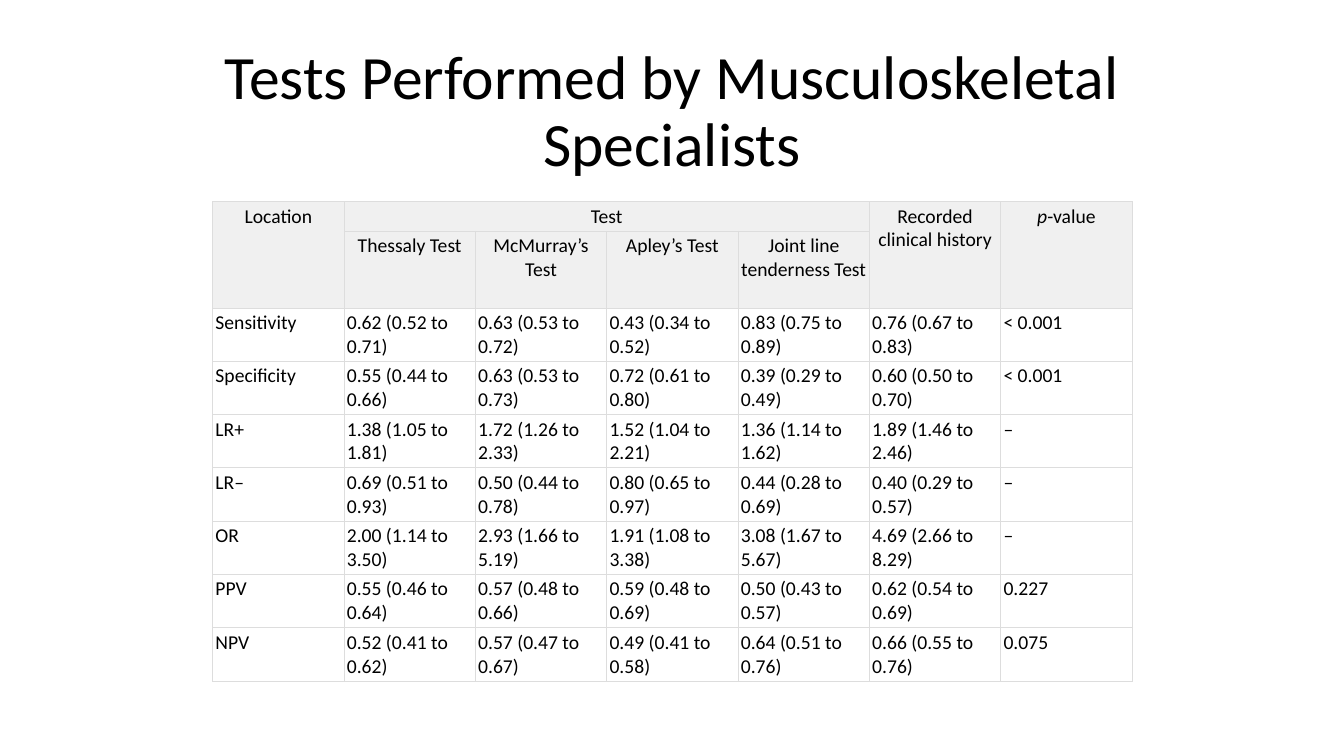
from dataclasses import dataclass

from lxml.etree import SubElement
from pptx import Presentation
from pptx.dml.color import RGBColor
from pptx.enum.text import MSO_ANCHOR as Anchor, PP_ALIGN as Align
from pptx.oxml.ns import qn
from pptx.slide import Slide
from pptx.table import Table, _Cell as Cell
from pptx.text.text import _Paragraph as Paragraph
from pptx.util import Cm, Pt

COLORS = {"text": "000000", "header": "F0F0F0", "border": "DDDDDD"}
FONT = "Calibri"
COLUMN_WIDTH = Cm(3.31)
ROW_HEIGHTS = [Cm(0.74), Cm(1.94)] + [Cm(1.34)] * 7
CELL_MARGIN = Cm(0.07)


@dataclass(frozen=True)
class Heading:
    """A header cell with its place in the grid and the cells it spans."""
    row: int
    column: int
    text: str
    rows: int = 1
    columns: int = 1
    italic_prefix: str = ""


@dataclass(frozen=True)
class Measure:
    """A body row: one estimate per test, the clinical history and the p-value."""
    label: str
    estimates: tuple[str, ...]
    p_value: str


HEADINGS = [
    Heading(0, 0, "Location", rows=2),
    Heading(0, 1, "Test", columns=4),
    Heading(0, 5, "Recorded clinical history", rows=2),
    Heading(0, 6, "-value", rows=2, italic_prefix="p"),
    Heading(1, 1, "Thessaly Test"),
    Heading(1, 2, "McMurray’s Test"),
    Heading(1, 3, "Apley’s Test"),
    Heading(1, 4, "Joint line tenderness Test"),
]

MEASURES = [
    Measure("Sensitivity", ("0.62 (0.52 to 0.71)", "0.63 (0.53 to 0.72)", "0.43 (0.34 to 0.52)",
                            "0.83 (0.75 to 0.89)", "0.76 (0.67 to 0.83)"), "< 0.001"),
    Measure("Specificity", ("0.55 (0.44 to 0.66)", "0.63 (0.53 to 0.73)", "0.72 (0.61 to 0.80)",
                            "0.39 (0.29 to 0.49)", "0.60 (0.50 to 0.70)"), "< 0.001"),
    Measure("LR+", ("1.38 (1.05 to 1.81)", "1.72 (1.26 to 2.33)", "1.52 (1.04 to 2.21)",
                    "1.36 (1.14 to 1.62)", "1.89 (1.46 to 2.46)"), "–"),
    Measure("LR–", ("0.69 (0.51 to 0.93)", "0.50 (0.44 to 0.78)", "0.80 (0.65 to 0.97)",
                    "0.44 (0.28 to 0.69)", "0.40 (0.29 to 0.57)"), "–"),
    Measure("OR", ("2.00 (1.14 to 3.50)", "2.93 (1.66 to 5.19)", "1.91 (1.08 to 3.38)",
                   "3.08 (1.67 to 5.67)", "4.69 (2.66 to 8.29)"), "–"),
    Measure("PPV", ("0.55 (0.46 to 0.64)", "0.57 (0.48 to 0.66)", "0.59 (0.48 to 0.69)",
                    "0.50 (0.43 to 0.57)", "0.62 (0.54 to 0.69)"), "0.227"),
    Measure("NPV", ("0.52 (0.41 to 0.62)", "0.57 (0.47 to 0.67)", "0.49 (0.41 to 0.58)",
                    "0.64 (0.51 to 0.76)", "0.66 (0.55 to 0.76)"), "0.075"),
]


def add_run(paragraph: Paragraph, text: str, size: int = 14, italic: bool = False) -> None:
    """Append one formatted run."""
    run = paragraph.add_run()
    run.text = text
    run.font.name = FONT
    run.font.size = Pt(size)
    run.font.bold = False
    run.font.italic = italic
    run.font.color.rgb = RGBColor.from_string(COLORS["text"])


def add_borders(cell: Cell) -> None:
    """Draw the four thin cell borders."""
    properties = cell._tc.get_or_add_tcPr()
    for side in ("lnL", "lnR", "lnT", "lnB"):
        border = SubElement(properties, qn(f"a:{side}"), w=str(Pt(0.75)))
        fill = SubElement(border, qn("a:solidFill"))
        SubElement(fill, qn("a:srgbClr"), val=COLORS["border"])


def format_cell(cell: Cell, is_header: bool) -> None:
    """Set borders, margins and fill."""
    add_borders(cell)
    cell.margin_left = cell.margin_right = CELL_MARGIN
    cell.margin_top = cell.margin_bottom = CELL_MARGIN
    if is_header:
        cell.fill.solid()
        cell.fill.fore_color.rgb = RGBColor.from_string(COLORS["header"])
    else:
        cell.fill.background()


def write_heading(table: Table, heading: Heading) -> None:
    """Merge the span of a heading and write its text."""
    cell = table.cell(heading.row, heading.column)
    if heading.rows * heading.columns > 1:
        cell.merge(table.cell(heading.row + heading.rows - 1,
                              heading.column + heading.columns - 1))
    paragraph = cell.text_frame.paragraphs[0]
    paragraph.alignment = Align.CENTER
    if heading.italic_prefix:
        add_run(paragraph, heading.italic_prefix, italic=True)
    add_run(paragraph, heading.text)


def write_measure(table: Table, row: int, measure: Measure) -> None:
    """Fill one body row."""
    for column, text in enumerate((measure.label, *measure.estimates, measure.p_value)):
        paragraph = table.cell(row, column).text_frame.paragraphs[0]
        paragraph.alignment = Align.LEFT
        add_run(paragraph, text)


def add_results(slide: Slide) -> None:
    """Add the table of test results."""
    results = slide.shapes.add_table(len(ROW_HEIGHTS), 7, Cm(5.36), Cm(5.08),
                                     COLUMN_WIDTH * 7, sum(ROW_HEIGHTS)).table
    results.horz_banding = False
    results.first_row = False
    for column in results.columns:
        column.width = COLUMN_WIDTH
    for index, (row, height) in enumerate(zip(results.rows, ROW_HEIGHTS)):
        row.height = height
        for cell in row.cells:
            format_cell(cell, is_header=index < 2)
    for heading in HEADINGS:
        write_heading(results, heading)
    for row_index, measure in enumerate(MEASURES, start=2):
        write_measure(results, row_index, measure)


def write_title(slide: Slide, text: str) -> None:
    """Place and format the title placeholder."""
    title = slide.shapes.title
    title.left, title.top, title.width, title.height = Cm(2.33), Cm(1.01), Cm(29.21), Cm(3.68)
    title.text_frame.word_wrap = True
    title.text_frame.vertical_anchor = Anchor.MIDDLE
    paragraph = title.text_frame.paragraphs[0]
    paragraph.alignment = Align.CENTER
    paragraph.line_spacing = 0.9
    add_run(paragraph, text, size=44)


def main() -> None:
    """Build and save the slide."""
    presentation = Presentation()
    presentation.slide_width, presentation.slide_height = Cm(33.87), Cm(19.05)
    slide = presentation.slides.add_slide(presentation.slide_layouts[5])
    write_title(slide, "Tests Performed by Musculoskeletal Specialists")
    add_results(slide)
    presentation.save("out.pptx")


if __name__ == "__main__":
    main()
